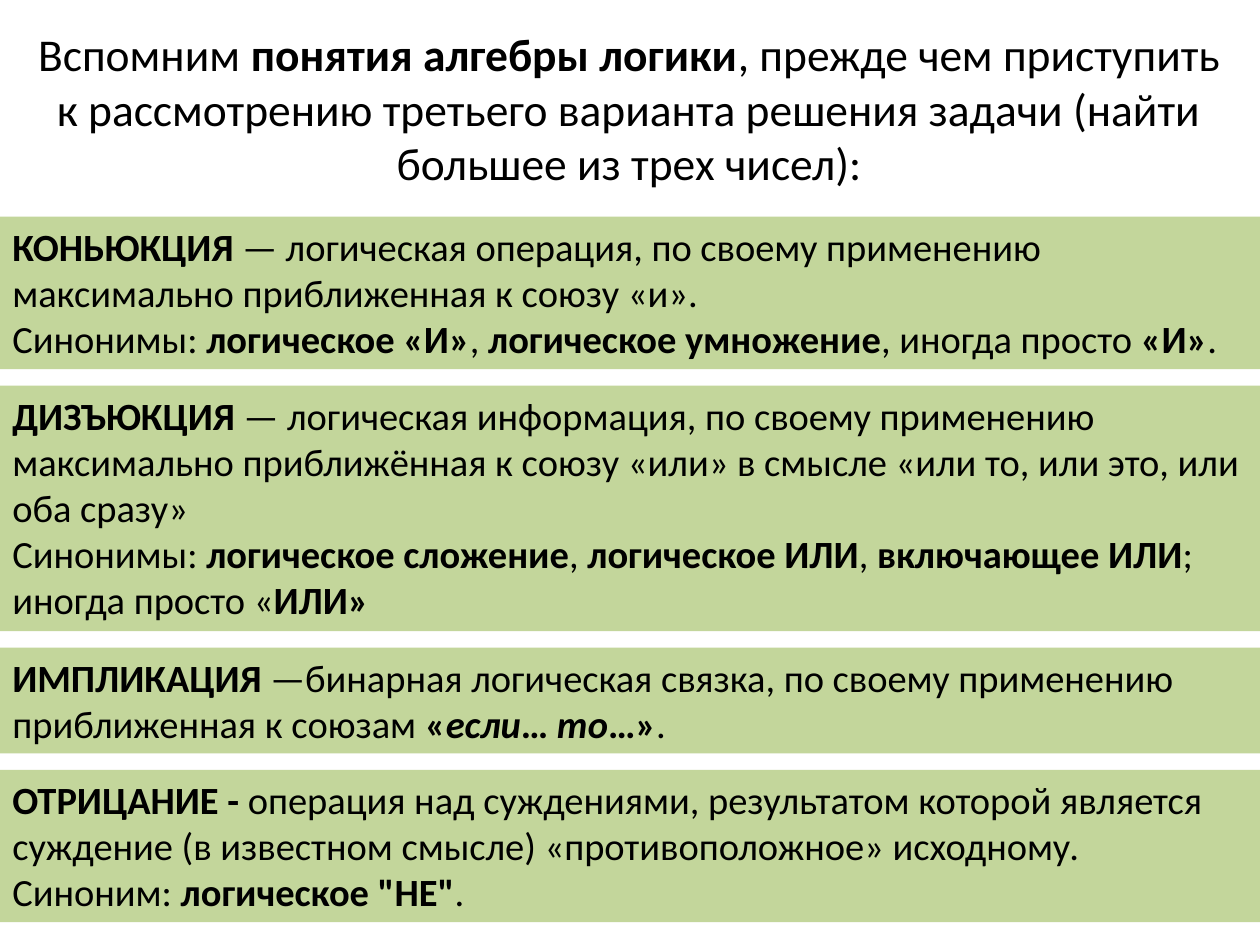
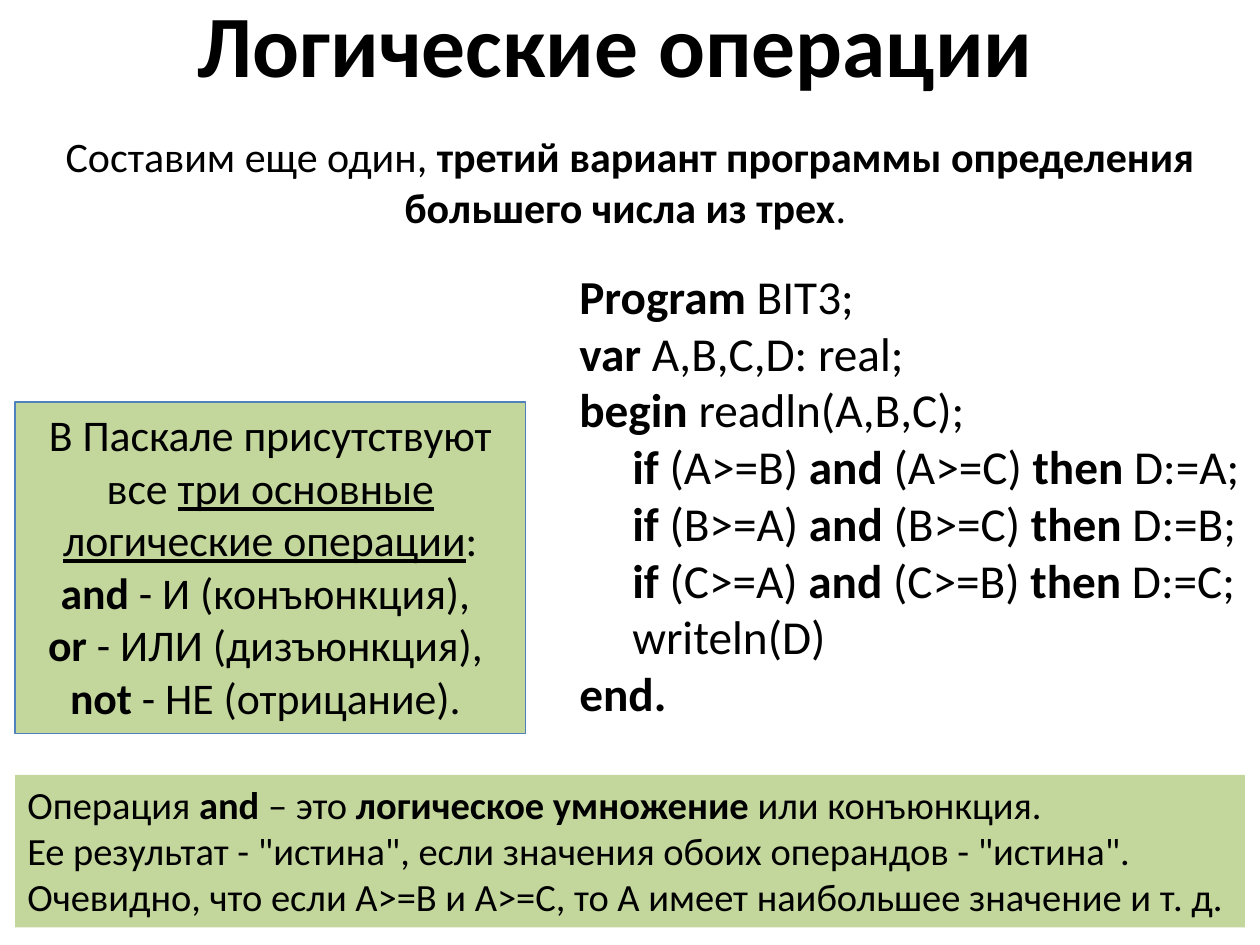
from collections import namedtuple

from pptx import Presentation
from pptx.dml.color import RGBColor
from pptx.enum.shapes import MSO_SHAPE
from pptx.enum.text import MSO_ANCHOR, PP_ALIGN
from pptx.util import Inches, Pt

COLORS = {"text": "000000", "panel": "C3D69B", "outline": "4F81BD"}
FONT = "Calibri"
WIDTH, HEIGHT = Inches(10), Inches(7.5)
COLUMNS, ROWS = 100, 75
PANEL_SIZE = 22
LINE_ROWS, PADDING_ROWS, GAP_ROWS = 3.7, 1, 1.3
CODE_INDENT = 4.2
STYLE_MARKS = {"*": "bold", "~": "italic", "_": "underline"}

Box = namedtuple("Box", "column row columns rows")

INTRO = (
    "Вспомним *понятия алгебры логики*, прежде чем приступить "
    "к рассмотрению третьего варианта решения задачи (найти большее из трех чисел):"
)
DEFINITIONS = [
    (3, [
        "*КОНЬЮКЦИЯ *— логическая операция, по своему применению "
        "максимально приближенная к союзу «и».",
        "Синонимы: *логическое «И»*, *логическое умножение*, иногда просто *«И»*.",
    ]),
    (5, [
        "*ДИЗЪЮКЦИЯ* — логическая информация, по своему применению максимально "
        "приближённая к союзу «или» в смысле «или то, или это, или оба сразу»",
        "Синонимы: *логическое сложение*, *логическое ИЛИ*, *включающее ИЛИ*; "
        "иногда просто «*ИЛИ»*",
    ]),
    (2, [
        "*ИМПЛИКАЦИЯ* —бинарная логическая связка, по своему применению "
        "приближенная к союзам *«~если~… ~то~…»*.",
    ]),
    (3, [
        "*ОТРИЦАНИЕ - *операция над суждениями, результатом которой является "
        "суждение (в известном смысле) «противоположное» исходному.",
        'Синоним: *логическое "НЕ"*.',
    ]),
]

TITLE = "*Логические операции*"
TASK = "Составим еще один, *третий вариант программы определения большего числа из трех*. "
CODE = [
    (0, "*Program* BIT3;"),
    (0, "*var *А,В,С,D: real; "),
    (0, "*begin *readln(А,В,С);"),
    *[
        (1, f"*if* ({largest}>={second}) *and* ({largest}>={third}) *then* D:={largest};")
        for largest, second, third in ("ABC", "BAC", "CAB")
    ],
    (1, "writeln(D)"),
    (0, "*end.*"),
]
OPERATIONS = [
    "В Паскале присутствуют все _три основные логические операции_:",
    "*and* - И (конъюнкция), ",
    "*or* - ИЛИ (дизъюнкция), ",
    "*not* - НЕ (отрицание). ",
]
CONCLUSION = [
    "Операция *and* – это *логическое умножение *или конъюнкция.",
    'Ее результат - "истина", если значения обоих операндов - "истина".',
    "Очевидно, что если А>=В и А>=С, то А имеет наибольшее значение и т. д.",
]


def across(columns):
    return round(WIDTH * columns / COLUMNS)


def down(rows):
    return round(HEIGHT * rows / ROWS)


def place(box):
    return across(box.column), down(box.row), across(box.columns), down(box.rows)


def add_spans(para, marked_text):
    styles = {name: False for name in STYLE_MARKS.values()}
    piece = ""
    for letter in marked_text + "\0":
        if letter != "\0" and letter not in STYLE_MARKS:
            piece += letter
            continue
        if piece:
            span = para.add_run()
            span.text = piece
            for name, active in styles.items():
                if active:
                    setattr(span.font, name, True)
            piece = ""
        if letter in STYLE_MARKS:
            styles[STYLE_MARKS[letter]] = not styles[STYLE_MARKS[letter]]


def fill_text(shape, lines, size, align=PP_ALIGN.LEFT):
    frame = shape.text_frame
    frame.word_wrap = True
    frame.vertical_anchor = MSO_ANCHOR.TOP
    for index, line in enumerate(lines):
        para = frame.add_paragraph() if index else frame.paragraphs[0]
        para.alignment = align
        para.font.name = FONT
        para.font.size = Pt(size)
        para.font.color.rgb = RGBColor.from_string(COLORS["text"])
        add_spans(para, line)
    return frame


def add_text(page, box, lines, size, align=PP_ALIGN.LEFT):
    return fill_text(page.shapes.add_textbox(*place(box)), lines, size, align)


def add_panel(page, box, lines, size=PANEL_SIZE, align=PP_ALIGN.LEFT, outline=None):
    panel = page.shapes.add_shape(MSO_SHAPE.RECTANGLE, *place(box))
    panel.shadow.inherit = False
    panel.fill.solid()
    panel.fill.fore_color.rgb = RGBColor.from_string(COLORS["panel"])
    if outline:
        panel.line.color.rgb = RGBColor.from_string(COLORS[outline])
        panel.line.width = Pt(0.75)
    else:
        panel.line.fill.background()
    fill_text(panel, lines, size, align)


def panel_rows(line_count):
    return PADDING_ROWS + LINE_ROWS * line_count


def add_definitions(page, box):
    row = box.row
    for line_count, lines in DEFINITIONS:
        rows = panel_rows(line_count)
        add_panel(page, Box(box.column, row, box.columns, rows), lines)
        row += rows + GAP_ROWS


def add_program(page, box):
    frame = add_text(page, box, [line for _, line in CODE], 27)
    for para, (depth, _) in zip(frame.paragraphs, CODE):
        if depth:
            para._p.get_or_add_pPr().set("marL", str(across(CODE_INDENT * depth)))


def build_concepts(page):
    add_text(page, Box(1, 1.6, 97.9, 14.1), [INTRO], 26, PP_ALIGN.CENTER)
    add_definitions(page, Box(0, 17.2, COLUMNS, 56))


def build_operations(page):
    margin = 1.2
    content_columns = COLUMNS - 2 * margin
    add_text(page, Box(14.7, -1.3, 69, 9.4), [TITLE], 50)
    add_program(page, Box(45, 20.7, 55, 37.4))
    add_text(page, Box(margin, 9.9, content_columns, 9.1), [TASK], 24, PP_ALIGN.CENTER)
    add_panel(page, Box(margin, 31.9, 40.5, 26.3), OPERATIONS, 25, PP_ALIGN.CENTER, "outline")
    add_panel(page, Box(margin, 61.5, content_columns, panel_rows(len(CONCLUSION))), CONCLUSION)


def main():
    deck = Presentation()
    deck.slide_width, deck.slide_height = WIDTH, HEIGHT
    blank = deck.slide_layouts[6]
    for build in (build_concepts, build_operations):
        build(deck.slides.add_slide(blank))
    deck.save("out.pptx")


if __name__ == "__main__":
    main()
